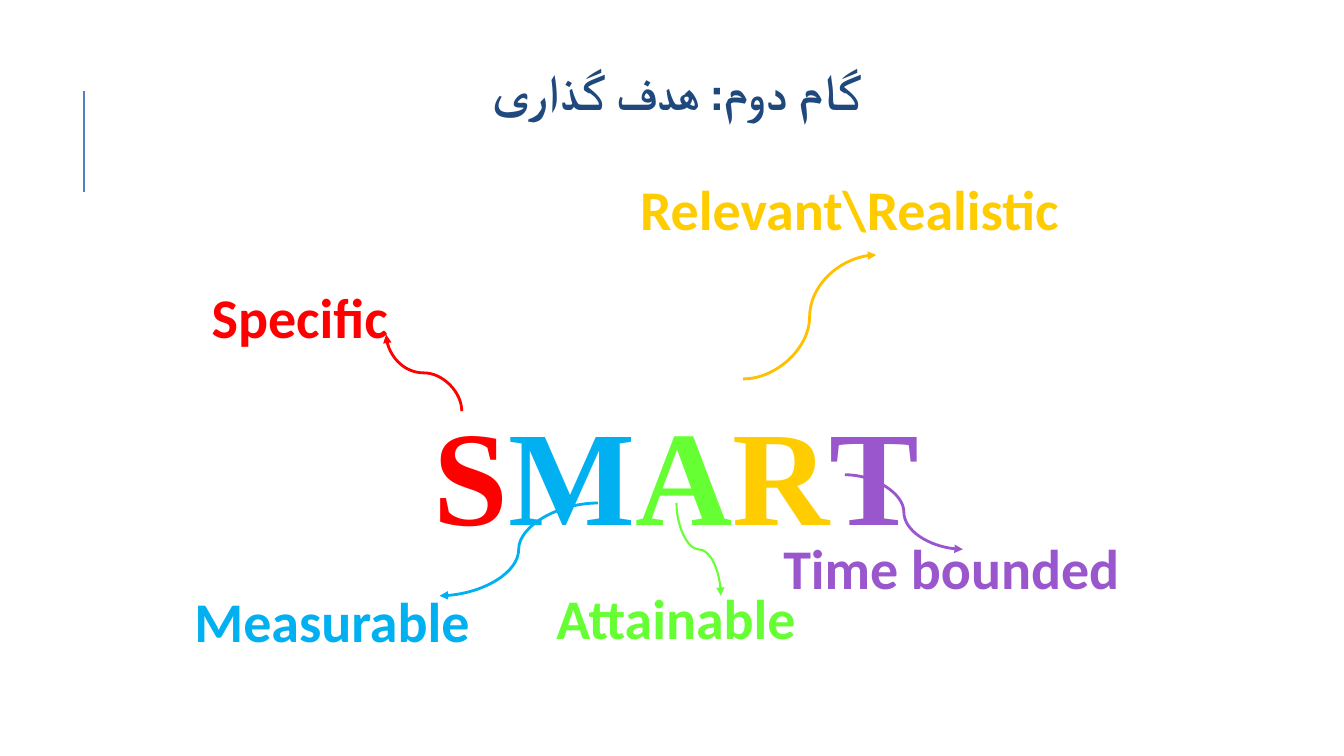
from lxml.etree import SubElement
from pptx import Presentation
from pptx.dml.color import RGBColor
from pptx.enum.shapes import MSO_CONNECTOR
from pptx.enum.text import MSO_ANCHOR, MSO_AUTO_SIZE, PP_ALIGN
from pptx.oxml.ns import qn
from pptx.util import Inches, Pt

TITLE = "گام دوم: هدف گذاری"
TITLE_BOX = (2.29, 0.41, 8.84, 0.84)
ACRONYM = [("S", "FF0000"), ("M", "00B0F0"), ("A", "66FF33"),
           ("R", "FFCC00"), ("T", "9A57CD")]
ACRONYM_BOX = (2.29, 1.97, 8.84, 4.47)
LABEL_HEIGHT = 0.77
# text, colour, left, top, width
LABELS = [
    ("Specific", "FF0000", 2, 2.75, 1.99),
    ("Measurable", "00B0F0", 1.83, 5.77, 3),
    ("Attainable", "66FF33", 5.42, 5.74, 2.88),
    ("Relevant\\Realistic", "FFCC00", 6.25, 1.68, 4.51),
    ("Time bounded", "9A57CD", 7.67, 5.24, 3.65),
]
# begin, end, colour, line width, leaves vertically, opacity in percent
ARROWS = [
    ((4.58, 4.08), (3.83, 3.32), "FF0000", 2, True, 100),
    ((5.93, 4.99), (4.36, 5.91), "00B0F0", 2, False, 100),
    ((6.71, 4.99), (7.15, 5.91), "66FF33", 1.5, True, 98),
    ((7.37, 3.76), (8.69, 2.53), "FFC000", 2, False, 100),
    ((8.38, 4.71), (9.55, 5.45), "9A57CD", 2, False, 100),
]


def rgb(colour):
    return RGBColor.from_string(colour)


def write_text(shape, runs, size, font, align=PP_ALIGN.LEFT, anchor=MSO_ANCHOR.TOP,
               line_spacing=None, space_before=0, grow=False, rtl=False):
    """Fill the shape with one bold paragraph made of (text, colour) runs."""
    frame = shape.text_frame
    frame.word_wrap = True
    frame.auto_size = MSO_AUTO_SIZE.SHAPE_TO_FIT_TEXT if grow else MSO_AUTO_SIZE.NONE
    frame.vertical_anchor = anchor
    paragraph = frame.paragraphs[0]
    paragraph.alignment = align
    paragraph.line_spacing = line_spacing
    paragraph.space_before = Pt(space_before)
    if rtl:
        paragraph._p.get_or_add_pPr().set("rtl", "1")
    for text, colour in runs:
        run = paragraph.add_run()
        run.text = text
        run.font.size = Pt(size)
        run.font.name = font
        run.font.bold = True
        run.font.color.rgb = rgb(colour)
        if rtl:
            SubElement(run.font._element, qn("a:cs"), typeface=font)


def add_text_box(slide, box, runs, **text_format):
    shape = slide.shapes.add_textbox(*map(Inches, box))
    write_text(shape, runs, **text_format)


def add_line(slide, kind, begin, end, colour, width):
    line = slide.shapes.add_connector(kind, *map(Inches, (*begin, *end)))
    line.line.color.rgb = rgb(colour)
    line.line.width = Pt(width)
    SubElement(line._element.spPr, qn("a:effectLst"))
    return line


def add_curved_arrow(slide, begin, end, colour, width, vertical, opacity):
    """Draw an S-curve; a vertical one is laid out sideways, then turned by 270°."""
    if vertical:
        center_x, center_y = (begin[0] + end[0]) / 2, (begin[1] + end[1]) / 2
        begin, end = [(center_x - (y - center_y), center_y + (x - center_x))
                      for x, y in (begin, end)]
    arrow = add_line(slide, MSO_CONNECTOR.CURVE, begin, end, colour, width)
    if vertical:
        arrow._element.spPr.find(qn("a:xfrm")).set("rot", str(270 * 60000))
    outline = arrow.line._ln
    if opacity < 100:
        SubElement(outline.find(".//" + qn("a:srgbClr")), qn("a:alpha"),
                   val=str(opacity * 1000))
    SubElement(outline, qn("a:tailEnd"), type="triangle")


def main():
    presentation = Presentation()
    presentation.slide_width = Inches(13.33)
    presentation.slide_height = Inches(7.5)
    slide = presentation.slides.add_slide(presentation.slide_layouts[5])

    add_line(slide, MSO_CONNECTOR.STRAIGHT, (0.83, 1.9), (0.83, 0.9), "4F81BD", 1.5)
    title = slide.shapes.title
    title.left, title.top, title.width, title.height = map(Inches, TITLE_BOX)
    write_text(title, [(TITLE, "1F497D")], size=36, font="Cabin", align=PP_ALIGN.CENTER,
               anchor=MSO_ANCHOR.BOTTOM, line_spacing=0.9, rtl=True)
    add_text_box(slide, ACRONYM_BOX, ACRONYM, size=96, font="Times New Roman",
                 align=PP_ALIGN.CENTER, anchor=MSO_ANCHOR.MIDDLE,
                 line_spacing=1.6, space_before=19)
    for arrow in ARROWS:
        add_curved_arrow(slide, *arrow)
    for text, colour, left, top, width in LABELS:
        add_text_box(slide, (left, top, width, LABEL_HEIGHT), [(text, colour)],
                     size=40, font="Calibri", grow=True)
    presentation.save("out.pptx")


if __name__ == "__main__":
    main()
